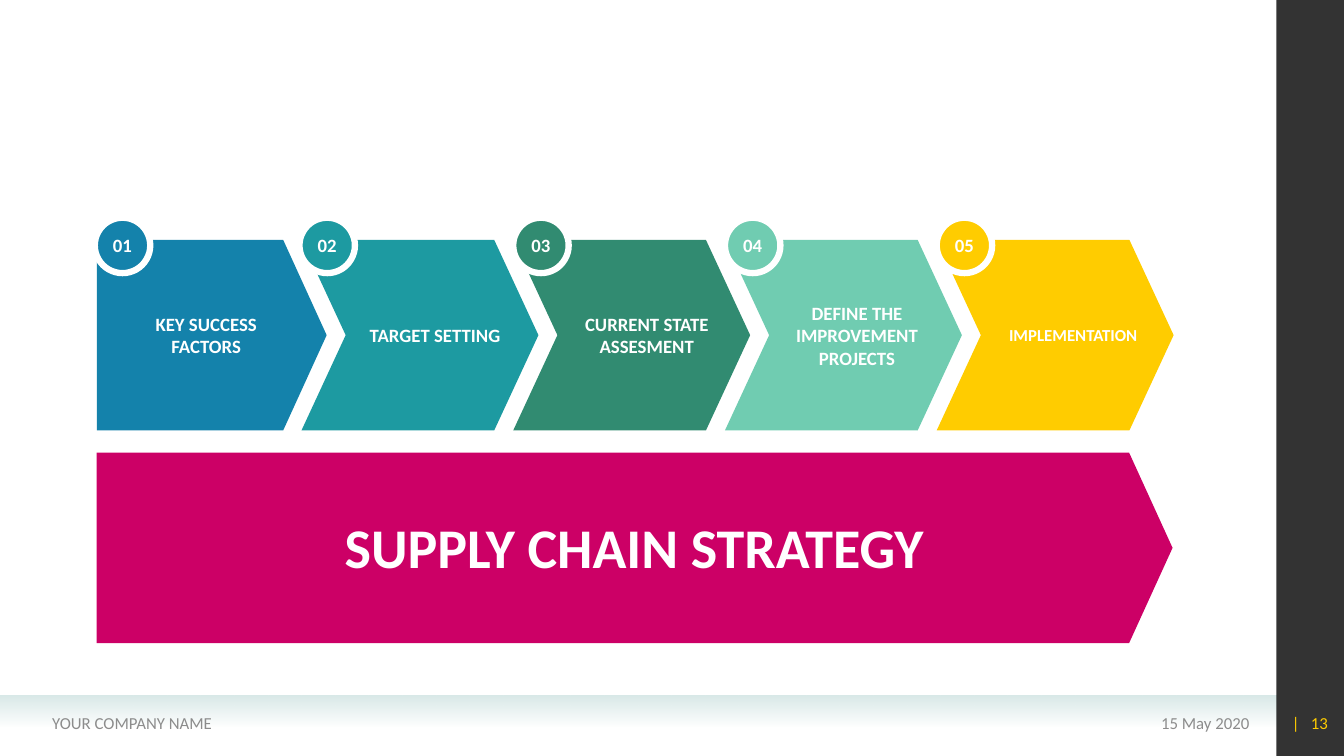
from pptx import Presentation
from pptx.dml.color import RGBColor
from pptx.enum.shapes import MSO_SHAPE as SHAPE
from pptx.enum.text import MSO_ANCHOR as ANCHOR, PP_ALIGN as ALIGN
from pptx.oxml.ns import qn
from pptx.oxml.xmlchemy import OxmlElement
from pptx.util import Pt

PX = 9144  # 100 px to the inch
FONT = "Calibri"
COLORS = {
    "white": "FFFFFF", "black": "000000", "grey": "8C8C8C", "mist": "D9E9E8",
    "magenta": "CC0066", "blue": "1482AB", "teal": "1D9AA1",
    "green": "318B71", "mint": "70CCB1", "yellow": "FFCC00",
}
# number, label, colour, circle left, label left, label width, label size
STEPS = [
    ("01", "KEY SUCCESS FACTORS", "blue", -2, 31, 155, 13.4),
    ("02", "TARGET SETTING", "teal", 201, 258, 155, 13.4),
    ("03", "CURRENT STATE ASSESMENT", "green", 413, 468, 155, 13.4),
    ("04", "DEFINE THE IMPROVEMENT PROJECTS", "mint", 623, 670, 168, 13.4),
    ("05", "IMPLEMENTATION", "yellow", 833, 885, 167, 12),
]


def rgb(name):
    return RGBColor.from_string(COLORS[name])


def emu(*lengths):
    return [v * PX for v in lengths]


def set_alpha(color_el, percent):
    alpha = OxmlElement("a:alpha")
    alpha.set("val", str(percent * 1000))
    color_el.append(alpha)


def add_block(slide, kind, box, color, adj=None):
    s = slide.shapes.add_shape(kind, *emu(*box))
    s.shadow.inherit = False
    s.fill.solid()
    s.fill.fore_color.rgb = rgb(color)
    s.line.fill.background()
    if adj is not None:
        s.adjustments[0] = adj
    return s


def write(s, text, size, color="white", bold=True, align=ALIGN.CENTER, wrap=True):
    tf = s.text_frame
    tf.word_wrap = wrap
    tf.vertical_anchor = ANCHOR.MIDDLE
    p = tf.paragraphs[0]
    p.alignment = align
    r = p.add_run()
    r.text = text
    r.font.name = FONT
    r.font.size = Pt(size)
    r.font.bold = bold
    r.font.color.rgb = rgb(color)


def add_label(slide, box, text, size, **style):
    write(slide.shapes.add_textbox(*emu(*box)), text, size, **style)


def add_frame(slide, width, height):
    """Footer band, dark side bar and the three footer texts."""
    bar_w = 67
    band = add_block(slide, SHAPE.RECTANGLE, (0, 690, width - bar_w, 31), "mist")
    band.fill.gradient()
    band.fill.gradient_angle = 270
    for stop in band.fill.gradient_stops:
        stop.color.rgb = rgb("mist")
    set_alpha(band._element.spPr.findall(".//" + qn("a:srgbClr"))[-1], 0)

    bar = add_block(slide, SHAPE.RECTANGLE, (width - bar_w, 0, bar_w, height), "black")
    set_alpha(bar._element.spPr.find(".//" + qn("a:srgbClr")), 80)

    for left, w, text, color, align in [
        (910, 339, "15 May 2020", "grey", ALIGN.RIGHT),
        (42, 490, "YOUR COMPANY NAME", "grey", ALIGN.LEFT),
        (1260, 67, "|   13", "yellow", ALIGN.RIGHT),
    ]:
        add_label(slide, (left, 697, w, 40), text, 12,
                  color=color, bold=False, align=align)


def add_strategy(slide, x, y, w, h):
    add_block(slide, SHAPE.PENTAGON, (x, y, w, h), "magenta", 0.228)
    add_label(slide, (x + 201, y + 54, 664, 77), "SUPPLY CHAIN STRATEGY", 40, wrap=False)


def add_steps(slide, x, y, h):
    """Row of arrows, each with a numbered circle at its upper left corner."""
    pitch, first_chevron = 210, x - 7
    for i, step in enumerate(STEPS):
        if i == 0:
            add_block(slide, SHAPE.PENTAGON, (x, y, 228, h), step[2], 0.228)
        else:
            add_block(slide, SHAPE.CHEVRON, (first_chevron + i * pitch, y, 235, h),
                      step[2], 0.232)
    for number, label, color, circle_x, label_x, label_w, size in STEPS:
        circle = add_block(slide, SHAPE.OVAL, (x + circle_x, y - 22, 55, 55), color)
        circle.line.color.rgb = rgb("white")
        circle.line.width = Pt(4.5)
        write(circle, number, 13.4, wrap=False)
        add_label(slide, (x + label_x, y + 52, label_w, 85), label, size)


def main():
    width, height = 1333, 750
    prs = Presentation()
    prs.slide_width, prs.slide_height = emu(width, height)
    slide = prs.slides.add_slide(prs.slide_layouts[6])
    add_frame(slide, width, height)
    add_strategy(slide, 96, 449, 1067, 189)
    add_steps(slide, 96, 238, 189)
    prs.save("out.pptx")


if __name__ == "__main__":
    main()
